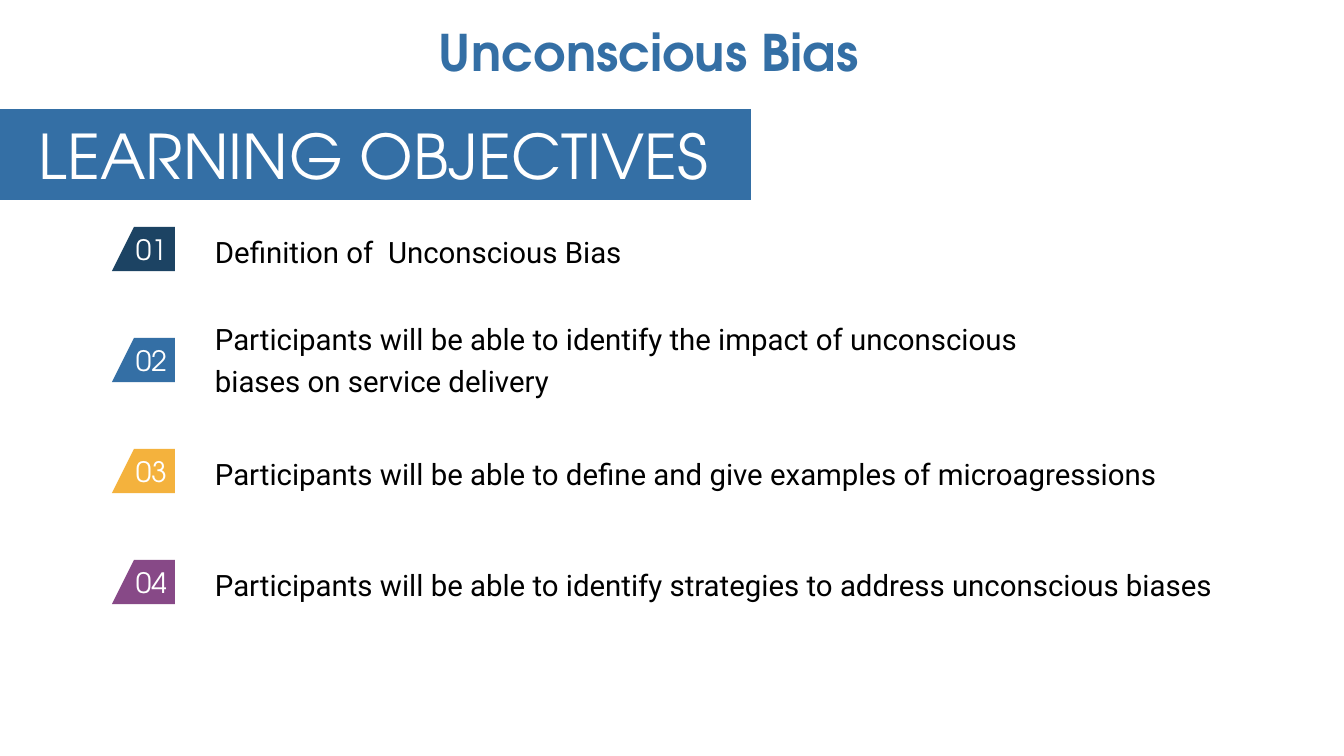
from pptx import Presentation
from pptx.dml.color import RGBColor
from pptx.enum.shapes import MSO_SHAPE
from pptx.enum.text import MSO_ANCHOR, MSO_AUTO_SIZE, PP_ALIGN
from pptx.util import Emu, Pt

COLORS = {
    "navy": "1C4363",
    "blue": "346FA5",
    "yellow": "F4B23D",
    "purple": "874987",
    "white": "FFFFFF",
    "black": "000000",
}
HEADING_FONT = "TeX Gyre Adventor"
BODY_FONT = "Roboto"


def px(length):
    return Emu(round(length * 914400 / 100.8))


def write(shape, text, font, size, color, align, anchor, bold=False):
    frame = shape.text_frame
    frame.word_wrap = True
    frame.auto_size = MSO_AUTO_SIZE.NONE
    frame.vertical_anchor = anchor
    paragraph = frame.paragraphs[0]
    paragraph.alignment = align
    run = paragraph.add_run()
    run.text = text
    run.font.name = font
    run.font.size = Pt(size)
    run.font.bold = bold
    run.font.color.rgb = RGBColor.from_string(COLORS[color])
    return paragraph


presentation = Presentation()
presentation.slide_width = px(1344)
presentation.slide_height = px(756)
slide = presentation.slides.add_slide(presentation.slide_layouts[5])

title = slide.shapes.title
title.left, title.top, title.width, title.height = px(37), px(16), px(1223), px(79)
write(title, "Unconscious Bias", HEADING_FONT, 36, "blue",
      PP_ALIGN.CENTER, MSO_ANCHOR.TOP, bold=True)

banner = slide.shapes.add_shape(MSO_SHAPE.RECTANGLE, 0, px(109), px(751), px(91))
banner.shadow.inherit = False
banner.fill.solid()
banner.fill.fore_color.rgb = RGBColor.from_string(COLORS["blue"])
banner.line.fill.background()

heading = slide.shapes.add_textbox(px(29), px(113), px(723), px(80))
write(heading, "LEARNING OBJECTIVES", HEADING_FONT, 44, "white",
      PP_ALIGN.LEFT, MSO_ANCHOR.TOP)

TAG_LEFT, TAG_TOP, TAG_WIDTH, TAG_HEIGHT = 112, 227, 63, 44
TAG_SLANT, TAG_STEP = 22, 111

objectives = [
    ("navy", "Definition of  Unconscious Bias", 222, 1055, 53),
    ("blue", "Participants will be able to identify the impact of unconscious "
             "biases on service delivery", 310, 873, 92),
    ("yellow", "Participants will be able to define and give examples of "
               "microagressions", 446, 1055, 49),
    ("purple", "Participants will be able to identify strategies to address "
               "unconscious biases", 557, 1055, 49),
]

for index, (color, text, text_top, text_width, text_height) in enumerate(objectives):
    top = TAG_TOP + index * TAG_STEP
    right, bottom = TAG_LEFT + TAG_WIDTH, top + TAG_HEIGHT
    builder = slide.shapes.build_freeform(px(TAG_LEFT + TAG_SLANT), px(top))
    builder.add_line_segments([
        (px(right), px(top)),
        (px(right), px(bottom)),
        (px(TAG_LEFT), px(bottom)),
    ], close=True)
    tag = builder.convert_to_shape()
    tag.shadow.inherit = False
    tag.fill.solid()
    tag.fill.fore_color.rgb = RGBColor.from_string(COLORS[color])
    tag.line.fill.background()
    tag.text_frame.margin_left = 0
    tag.text_frame.margin_right = px(8)
    write(tag, f"{index + 1:02}", HEADING_FONT, 20, "white",
          PP_ALIGN.RIGHT, MSO_ANCHOR.MIDDLE)

    objective = slide.shapes.add_textbox(px(205), px(text_top), px(text_width), px(text_height))
    paragraph = write(objective, text, BODY_FONT, 21, "black",
                      PP_ALIGN.LEFT, MSO_ANCHOR.MIDDLE)
    paragraph.line_spacing = 1.2

presentation.save("out.pptx")
